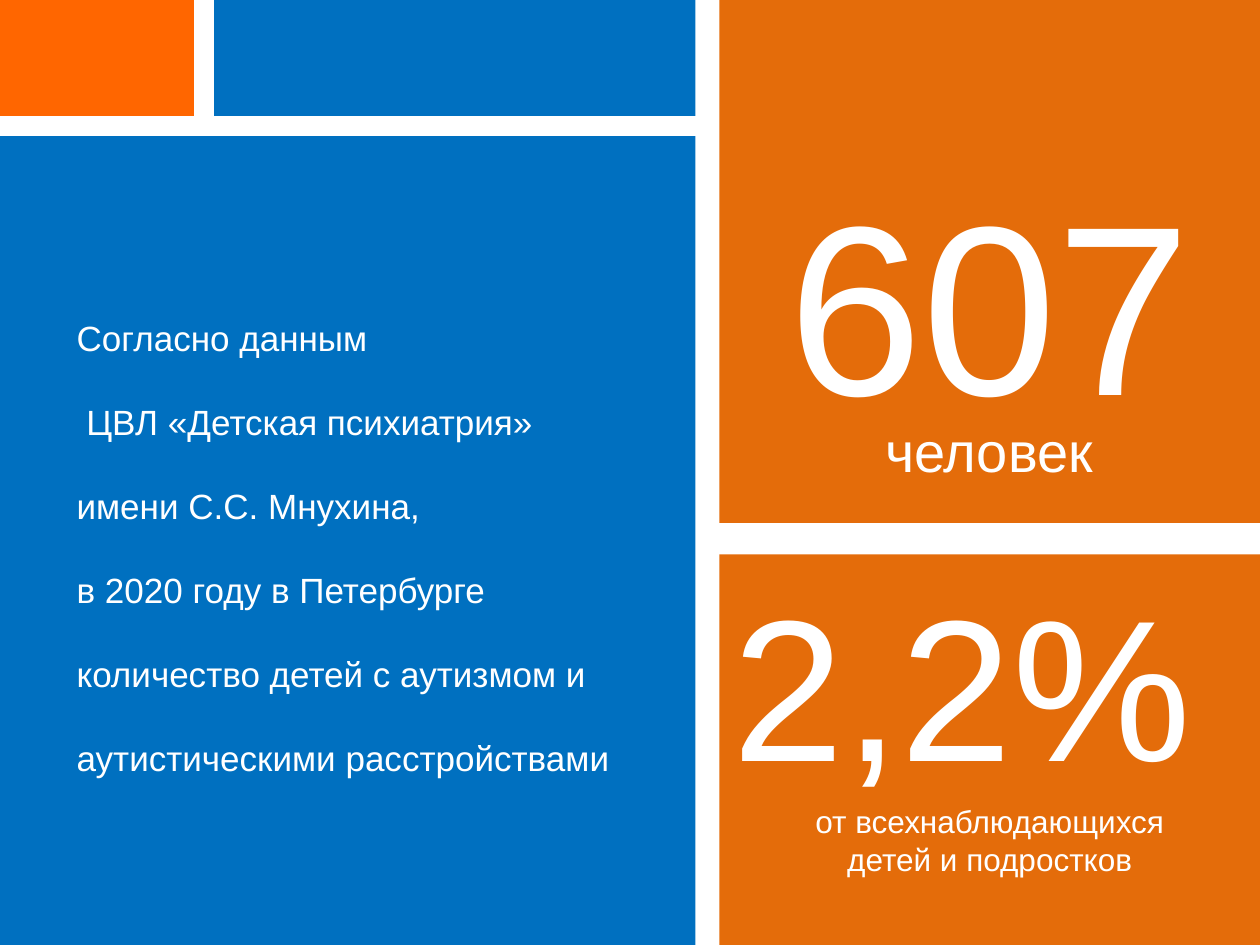
"""Build a slide of coloured tiles with autism statistics for Petersburg."""
from dataclasses import dataclass

from pptx import Presentation
from pptx.dml.color import RGBColor
from pptx.enum.shapes import MSO_SHAPE as Shape
from pptx.enum.text import MSO_AUTO_SIZE as AutoSize, PP_ALIGN as Align
from pptx.slide import Slide
from pptx.util import Inches, Pt


@dataclass(frozen=True)
class Theme:
    font: str = "Arial"
    blue: str = "0070C0"
    orange: str = "E46C0A"
    bright: str = "FF6600"
    white: str = "FFFFFF"
    body: int = 20
    total: int = 138
    share: int = 115
    unit: int = 32
    caption: int = 18


@dataclass(frozen=True)
class Area:
    left: float
    top: float
    width: float
    height: float

    def lengths(self) -> list[Inches]:
        return [Inches(v) for v in (self.left, self.top, self.width, self.height)]


@dataclass(frozen=True)
class Tile:
    area: Area
    color: str


@dataclass(frozen=True)
class Paragraph:
    lines: tuple[str, ...]
    size: int
    align: Align = Align.CENTER
    spacing: float = 1.0


@dataclass(frozen=True)
class Label:
    area: Area
    paragraphs: tuple[Paragraph, ...]
    wrap: bool = True


THEME = Theme()
WIDTH, HEIGHT = 10, 7.5
LEFT_EDGE, RIGHT_START = 5.52, 5.71
RIGHT_WIDTH = WIDTH - RIGHT_START
HEADER, BODY_TOP, ACCENT_START, SHARE_TOP = 0.92, 1.08, 1.7, 4.4

TILES = (
    Tile(Area(RIGHT_START, 0, RIGHT_WIDTH, 4.15), THEME.orange),
    Tile(Area(0, BODY_TOP, LEFT_EDGE, HEIGHT - BODY_TOP), THEME.blue),
    Tile(Area(0, 0, 1.54, HEADER), THEME.bright),
    Tile(Area(ACCENT_START, 0, LEFT_EDGE - ACCENT_START, HEADER), THEME.blue),
    Tile(Area(RIGHT_START, SHARE_TOP, RIGHT_WIDTH, HEIGHT - SHARE_TOP), THEME.orange),
)

STATEMENT = (
    "Согласно данным",
    " ЦВЛ «Детская психиатрия» ",
    "имени С.С. Мнухина, ",
    "в 2020 году в Петербурге количество детей с аутизмом и аутистическими расстройствами",
)
CAPTION = ("от всехнаблюдающихся", "детей и подростков")

LABELS = (
    Label(Area(0.51, 2.13, 4.8, 4.04), (Paragraph(STATEMENT, THEME.body, Align.LEFT, 2.0),)),
    Label(Area(RIGHT_START, 1.17, RIGHT_WIDTH, 2.42), (Paragraph(("607",), THEME.total),)),
    Label(
        Area(RIGHT_START, SHARE_TOP, RIGHT_WIDTH, 2.64),
        (Paragraph(("2,2% ",), THEME.share), Paragraph(CAPTION, THEME.caption)),
    ),
    Label(Area(6.92, 3.26, 1.86, 0.64), (Paragraph(("человек",), THEME.unit),), wrap=False),
)


def draw_tile(page: Slide, tile: Tile) -> None:
    box = page.shapes.add_shape(Shape.RECTANGLE, *tile.area.lengths())
    box.shadow.inherit = False
    box.fill.solid()
    box.fill.fore_color.rgb = RGBColor.from_string(tile.color)
    box.line.fill.background()


def draw_label(page: Slide, label: Label) -> None:
    frame = page.shapes.add_textbox(*label.area.lengths()).text_frame
    frame.word_wrap = label.wrap
    frame.auto_size = AutoSize.SHAPE_TO_FIT_TEXT
    for index, paragraph in enumerate(label.paragraphs):
        para = frame.add_paragraph() if index else frame.paragraphs[0]
        para.alignment = paragraph.align
        para.line_spacing = paragraph.spacing
        para.font.size = Pt(paragraph.size)
        for row, line in enumerate(paragraph.lines):
            if row:
                para.add_line_break()
            span = para.add_run()
            span.text = line
            span.font.name = THEME.font
            span.font.size = Pt(paragraph.size)
            span.font.color.rgb = RGBColor.from_string(THEME.white)


def main() -> None:
    deck = Presentation()
    deck.slide_width, deck.slide_height = Inches(WIDTH), Inches(HEIGHT)
    page = deck.slides.add_slide(deck.slide_layouts[6])
    for tile in TILES:
        draw_tile(page, tile)
    for label in LABELS:
        draw_label(page, label)
    deck.save("out.pptx")


if __name__ == "__main__":
    main()
